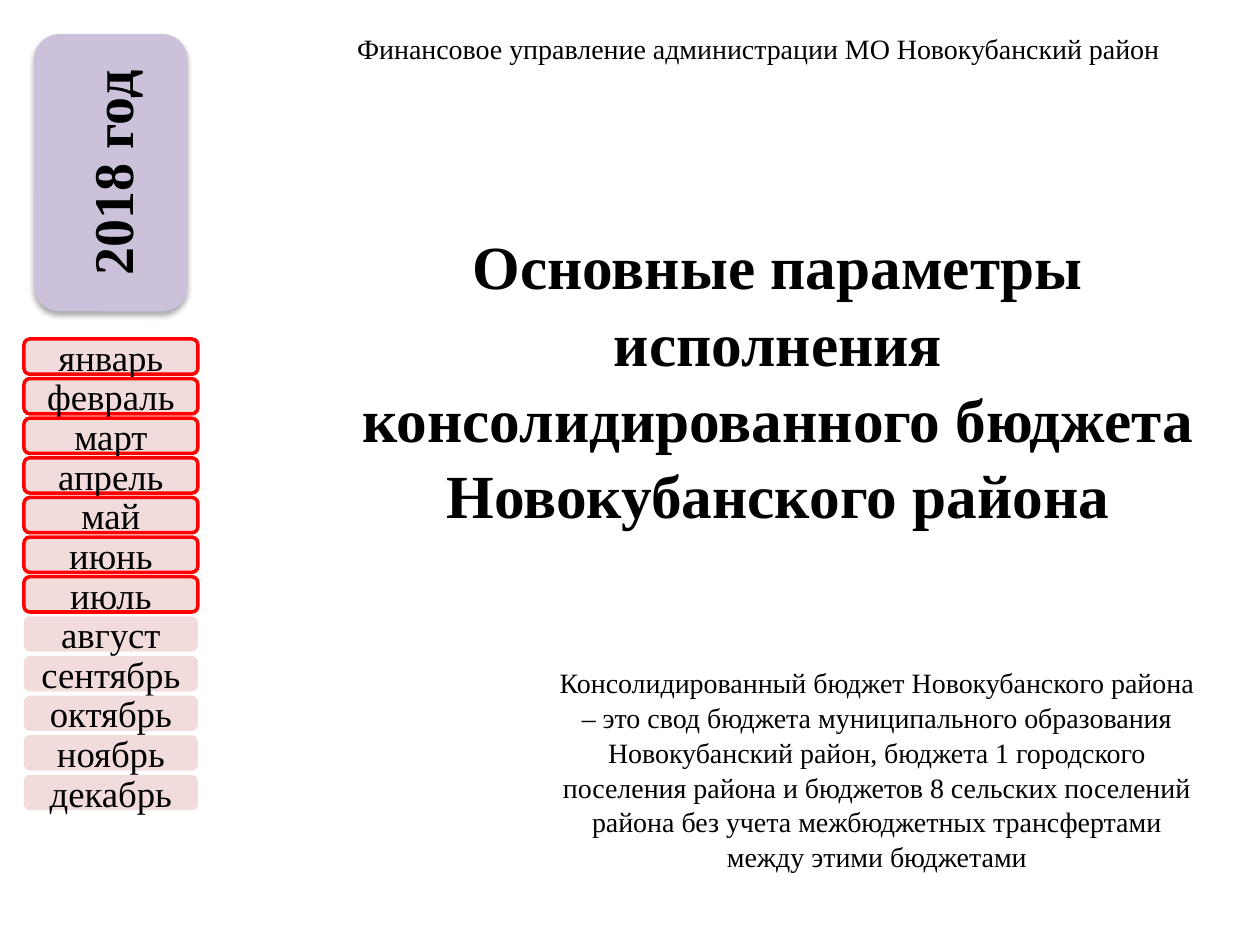
"""Build the 2018 budget overview slide with its month navigation column."""
from dataclasses import dataclass

from lxml import etree
from pptx import Presentation
from pptx.dml.color import RGBColor
from pptx.enum.shapes import MSO_SHAPE
from pptx.enum.text import MSO_ANCHOR, PP_ALIGN
from pptx.oxml.ns import qn
from pptx.util import Inches, Pt

ROUNDED = MSO_SHAPE.ROUNDED_RECTANGLE
CENTER = PP_ALIGN.CENTER
TOP, MIDDLE = MSO_ANCHOR.TOP, MSO_ANCHOR.MIDDLE
TITLE_ONLY = 5


@dataclass(frozen=True)
class Theme:
    """Hold the colours, font and type sizes."""
    font: str = "Times New Roman"
    text: str = "000000"
    month: str = "F2DCDB"
    year: str = "CCC1DA"
    outline: str = "FF0000"
    body_size: int = 16
    month_size: int = 21
    year_size: int = 32
    heading_size: int = 35


THEME = Theme()
MONTHS = ("январь", "февраль", "март", "апрель", "май", "июнь", "июль",
          "август", "сентябрь", "октябрь", "ноябрь", "декабрь")
REPORTED = 7
FIRST_TOP, LAST_TOP = 2.69, 6.15
OWNER = "Финансовое управление администрации МО Новокубанский район"
HEADING = ("Основные параметры исполнения консолидированного бюджета "
           "Новокубанского района")
DEFINITION = (
    "Консолидированный бюджет Новокубанского района – это свод бюджета "
    "муниципального образования Новокубанский район, бюджета 1 городского "
    "поселения района и бюджетов 8 сельских поселений района без учета "
    "межбюджетных трансфертами между этими бюджетами")


def write(sp, text, size, bold=False, anchor=MIDDLE, inset=0, spacing=1.0):
    """Write one centred paragraph into a shape."""
    tf = sp.text_frame
    tf.word_wrap = True
    tf.vertical_anchor = anchor
    tf.margin_top = tf.margin_bottom = Inches(inset)
    p = tf.paragraphs[0]
    p.alignment = CENTER
    p.line_spacing = spacing
    r = p.add_run()
    r.text = text
    r.font.name = THEME.font
    r.font.size = Pt(size)
    r.font.bold = bold
    r.font.color.rgb = RGBColor.from_string(THEME.text)


def add_title(slide, text, box):
    """Place and fill the title placeholder."""
    sp = slide.shapes.title
    sp.left, sp.top, sp.width, sp.height = map(Inches, box)
    write(sp, text, THEME.body_size)


def add_text(slide, text, box, **fmt):
    """Add a wrapping text box."""
    sp = slide.shapes.add_textbox(*map(Inches, box))
    write(sp, text, anchor=TOP, inset=0.05, spacing=1.04, **fmt)


def add_button(slide, text, box, fill, outline=None, **fmt):
    """Add a rounded button, outlined on request."""
    sp = slide.shapes.add_shape(ROUNDED, *map(Inches, box))
    sp.shadow.inherit = False
    sp.fill.solid()
    sp.fill.fore_color.rgb = RGBColor.from_string(fill)
    if outline:
        sp.line.color.rgb = RGBColor.from_string(outline)
        sp.line.width = Pt(2)
    else:
        sp.line.fill.background()
    write(sp, text, **fmt)
    return sp


def add_shadow(sp, color, alpha, blur, distance):
    """Give a shape a soft shadow falling downwards."""
    effects = sp.element.spPr.find(qn("a:effectLst"))
    shadow = etree.SubElement(
        effects, qn("a:outerShdw"), blurRad=str(Pt(blur)),
        dist=str(Pt(distance)), dir="5400000", rotWithShape="0")
    clr = etree.SubElement(shadow, qn("a:srgbClr"), val=color)
    etree.SubElement(clr, qn("a:alpha"), val=str(alpha * 1000))


def add_months(slide):
    """Stack the month buttons and outline the reported ones."""
    step = (LAST_TOP - FIRST_TOP) / (len(MONTHS) - 1)
    for i, month in enumerate(MONTHS):
        add_button(slide, month, (0.19, FIRST_TOP + i * step, 1.38, 0.28),
                   THEME.month, THEME.outline if i < REPORTED else None,
                   size=THEME.month_size)


def main():
    """Compose and save the slide."""
    prs = Presentation()
    prs.slide_width, prs.slide_height = Inches(10), Inches(7.5)
    slide = prs.slides.add_slide(prs.slide_layouts[TITLE_ONLY])
    add_title(slide, OWNER, (2.56, 0.25, 6.92, 0.27))
    year = add_button(slide, "2018 год", (-0.22, 0.76, 2.2, 1.22), THEME.year,
                      size=THEME.year_size, bold=True)
    year.rotation = 270
    add_shadow(year, THEME.text, alpha=32, blur=3.5, distance=2.2)
    add_text(slide, DEFINITION, (4.28, 5.22, 5.36, 1.72), size=THEME.body_size)
    add_text(slide, HEADING, (2.7, 1.74, 6.95, 2.46),
             size=THEME.heading_size, bold=True)
    add_months(slide)
    prs.save("out.pptx")


if __name__ == "__main__":
    main()
